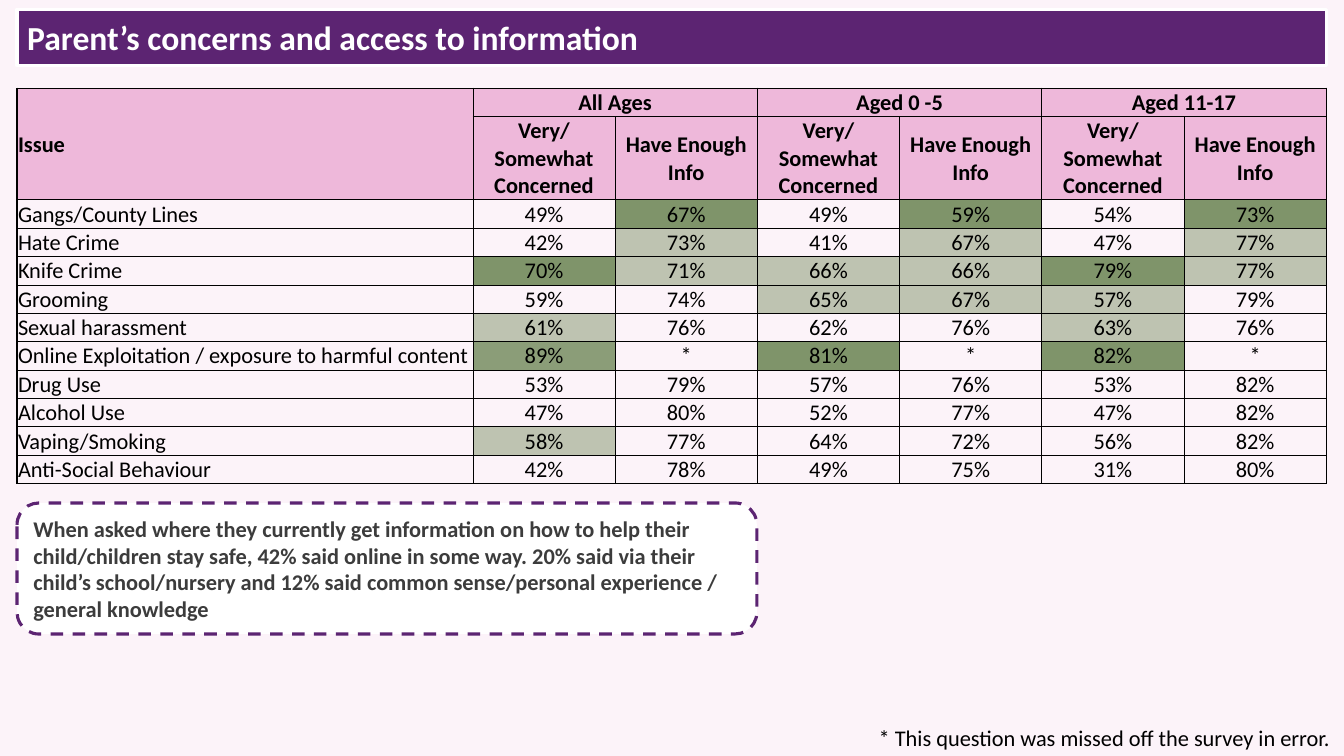
from lxml import etree
from pptx import Presentation
from pptx.dml.color import RGBColor
from pptx.enum.dml import MSO_LINE
from pptx.enum.shapes import MSO_SHAPE
from pptx.enum.text import MSO_ANCHOR, MSO_AUTO_SIZE, PP_ALIGN
from pptx.oxml.ns import qn
from pptx.util import Pt

LEFT, CENTER = PP_ALIGN.LEFT, PP_ALIGN.CENTER
MIDDLE, BOTTOM, TOP = MSO_ANCHOR.MIDDLE, MSO_ANCHOR.BOTTOM, MSO_ANCHOR.TOP
ROUNDED = MSO_SHAPE.ROUNDED_RECTANGLE
DASH = MSO_LINE.DASH

FONT = "Calibri"
COLORS = {
    "background": "FCF3F9",
    "purple": "5C2472",
    "white": "FFFFFF",
    "black": "000000",
    "grey": "3C3C3C",
    "header": "EEB8DA",
    "strong": "7F946A",
    "medium": "8B9D78",
    "light": "BEC3B1",
}
SHADES = {"S": "strong", "M": "medium", "L": "light", "-": None}

LEFT_EDGE = 12.2
ISSUE_WIDTH, VALUE_WIDTH = 325.6, 101.6
ROW_HEIGHT, SUBHEADER_HEIGHT = 19.7, 58.3
THIN, THICK = 0.5, 1

AGE_GROUPS = ["All Ages", "Aged 0 -5", "Aged 11-17"]
MEASURES = ["Very/Somewhat Concerned", "Have Enough Info"]
# Issue, values for each age group and measure, shade of each value
ISSUES = [
    ("Gangs/County Lines", "49% 67% 49% 59% 54% 73%", "-S-S-S"),
    ("Hate Crime", "42% 73% 41% 67% 47% 77%", "-L-L-L"),
    ("Knife Crime", "70% 71% 66% 66% 79% 77%", "SLLLSL"),
    ("Grooming", "59% 74% 65% 67% 57% 79%", "--LLL-"),
    ("Sexual harassment", "61% 76% 62% 76% 63% 76%", "L---L-"),
    ("Online Exploitation / exposure to harmful content",
     "89% * 81% * 82% *", "M-S-S-"),
    ("Drug Use", "53% 79% 57% 76% 53% 82%", "------"),
    ("Alcohol Use", "47% 80% 52% 77% 47% 82%", "------"),
    ("Vaping/Smoking", "58% 77% 64% 72% 56% 82%", "L-----"),
    ("Anti-Social Behaviour", "42% 78% 49% 75% 31% 80%", "------"),
]


def rgb(name):
    return RGBColor.from_string(COLORS[name])


def write(frame, text, size=16, color="black", bold=False, align=LEFT):
    paragraph = frame.paragraphs[0]
    paragraph.alignment = align
    run = paragraph.add_run()
    run.text = text
    run.font.name = FONT
    run.font.size = Pt(size)
    run.font.bold = bold
    run.font.color.rgb = rgb(color)


def place(shape, left, top, width, height):
    shape.left, shape.top = Pt(left), Pt(top)
    shape.width, shape.height = Pt(width), Pt(height)


def paint(shape, fill, line):
    shape.fill.solid()
    shape.fill.fore_color.rgb = rgb(fill)
    shape.line.color.rgb = rgb(line)
    shape.line.width = Pt(2.25)


def add_banner(slide, text):
    """Turn the title placeholder into a rounded purple bar."""
    banner = slide.shapes.title
    place(banner, LEFT_EDGE, 6.5, 935.2, 40.3)
    outline = etree.SubElement(banner.element.spPr, qn("a:prstGeom"), prst="roundRect")
    etree.SubElement(outline, qn("a:avLst"))
    paint(banner, "purple", "white")
    frame = banner.text_frame
    frame.auto_size = MSO_AUTO_SIZE.NONE
    frame.vertical_anchor = MIDDLE
    write(frame, text, 24, "white", True)


def set_border(cell, side, width):
    line = etree.SubElement(cell._tc.get_or_add_tcPr(), qn(f"a:ln{side}"),
                            w=str(Pt(width)))
    fill = etree.SubElement(line, qn("a:solidFill"))
    etree.SubElement(fill, qn("a:srgbClr"), val=COLORS["black"])


def format_cell(cell, row, column, last_row, fill):
    """Frame the header, the body and each age group with thicker lines."""
    cell.margin_left = cell.margin_right = cell.margin_top = Pt(0.7)
    cell.margin_bottom = 0
    group_start = column == 0 or (column > 1 and column % 2 == 1)
    group_end = column > 0 and column % 2 == 0
    thick_sides = {"L": group_start, "R": group_end,
                   "T": row in (0, 2), "B": row in (1, last_row)}
    for side, thick in thick_sides.items():
        set_border(cell, side, THICK if thick else THIN)
    if fill:
        cell.fill.solid()
        cell.fill.fore_color.rgb = rgb(fill)
    else:
        cell.fill.background()


def fill_cell(cell, text, bold=False, align=CENTER, anchor=MIDDLE):
    cell.vertical_anchor = anchor
    write(cell.text_frame, text, bold=bold, align=align)


def add_concerns_table(slide):
    row_count, column_count = len(ISSUES) + 2, len(AGE_GROUPS) * 2 + 1
    heights = [ROW_HEIGHT, SUBHEADER_HEIGHT] + [ROW_HEIGHT] * len(ISSUES)
    widths = [ISSUE_WIDTH] + [VALUE_WIDTH] * (column_count - 1)
    table = slide.shapes.add_table(
        row_count, column_count, Pt(LEFT_EDGE), Pt(63),
        Pt(sum(widths)), Pt(sum(heights))).table
    table.first_row = table.horz_banding = False
    for column, width in zip(table.columns, widths):
        column.width = Pt(width)
    for row, height in zip(table.rows, heights):
        row.height = Pt(height)

    fills = [["header"] * column_count] * 2
    fills += [[None] + [SHADES[mark] for mark in shades] for _, _, shades in ISSUES]
    for row, row_fills in enumerate(fills):
        for column, fill in enumerate(row_fills):
            format_cell(table.cell(row, column), row, column, row_count - 1, fill)

    table.cell(0, 0).merge(table.cell(1, 0))
    fill_cell(table.cell(0, 0), "Issue", True, LEFT)
    for group, age in enumerate(AGE_GROUPS):
        first = group * 2 + 1
        table.cell(0, first).merge(table.cell(0, first + 1))
        fill_cell(table.cell(0, first), age, True, anchor=BOTTOM)
        for offset, measure in enumerate(MEASURES):
            fill_cell(table.cell(1, first + offset), measure, True)
    for row, (issue, values, _) in enumerate(ISSUES, start=2):
        fill_cell(table.cell(row, 0), issue, align=LEFT)
        for column, value in enumerate(values.split(), start=1):
            fill_cell(table.cell(row, column), value)


def add_footnote(slide, text):
    footnote = slide.shapes.add_textbox(Pt(620.6), Pt(513.4), Pt(365), Pt(26.6))
    frame = footnote.text_frame
    frame.word_wrap = True
    frame.vertical_anchor = TOP
    write(frame, text)


def add_callout(slide, text):
    callout = slide.shapes.add_shape(ROUNDED, Pt(LEFT_EDGE), Pt(359.3), Pt(528.5), Pt(93.6))
    callout.shadow.inherit = False
    paint(callout, "white", "purple")
    callout.line.dash_style = DASH
    frame = callout.text_frame
    frame.word_wrap = True
    frame.vertical_anchor = MIDDLE
    write(frame, text, color="grey", bold=True)


def main():
    deck = Presentation()
    deck.slide_width, deck.slide_height = Pt(960), Pt(540)
    slide = deck.slides.add_slide(deck.slide_layouts.get_by_name("Title Only"))
    slide.background.fill.solid()
    slide.background.fill.fore_color.rgb = rgb("background")
    add_banner(slide, "Parent’s concerns and access to information")
    add_concerns_table(slide)
    add_footnote(slide, "* This question was missed off the survey in error.")
    add_callout(slide, "When asked where they currently get information on how to help "
                       "their child/children stay safe, 42% said online in some way. "
                       "20% said via their child’s school/nursery and 12% said common "
                       "sense/personal experience / general knowledge")
    deck.save("out.pptx")


if __name__ == "__main__":
    main()
